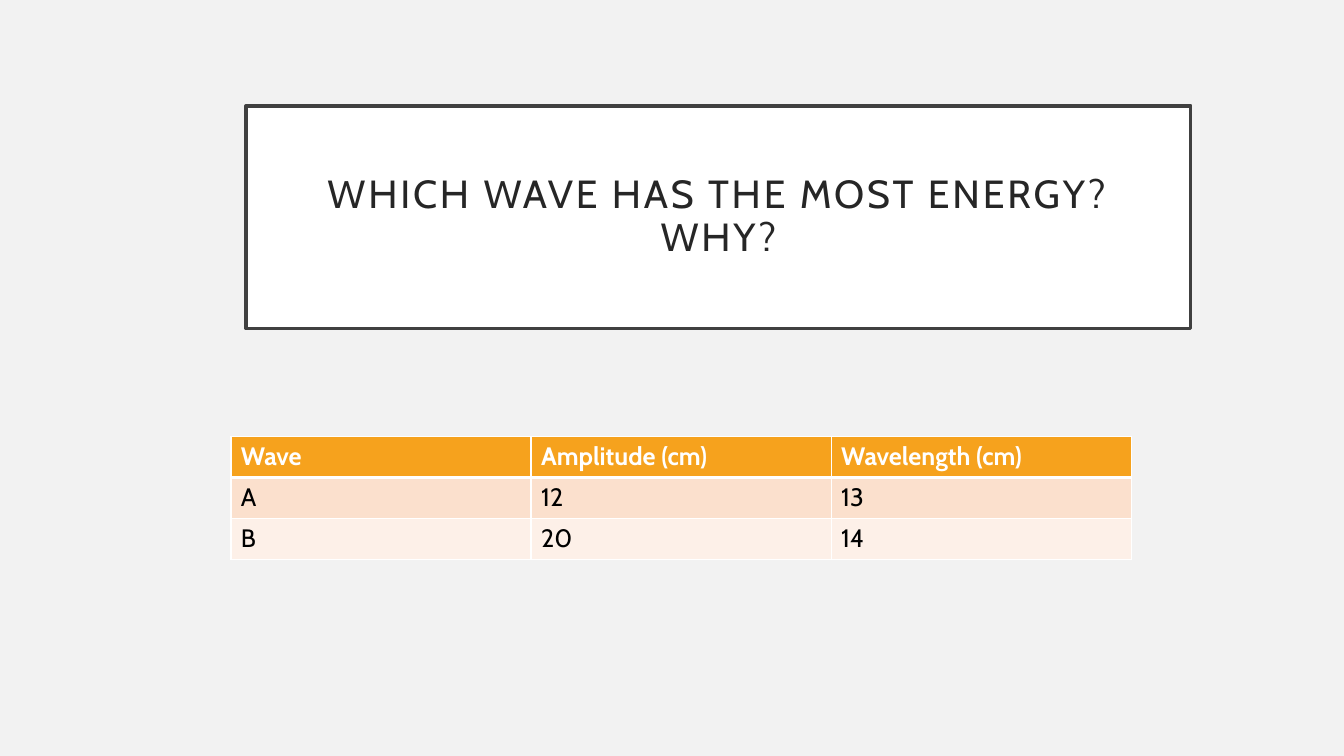
from dataclasses import dataclass

from lxml.etree import SubElement
from pptx import Presentation
from pptx.dml.color import RGBColor
from pptx.enum.text import MSO_ANCHOR, PP_ALIGN
from pptx.oxml.ns import qn
from pptx.util import Inches, Pt


@dataclass(frozen=True)
class Theme:
    font: str = "Cabin"
    background: str = "F2F2F2"
    white: str = "FFFFFF"
    black: str = "000000"
    title_text: str = "262626"
    title_line: str = "404040"
    header_fill: str = "F6A21D"
    band_fills: tuple = ("FBE0CD", "FDF0E8")
    title_size: int = 28
    table_size: int = 18


theme = Theme()


def style_run(run, size, color, bold=False):
    run.font.name = theme.font
    run.font.size = Pt(size)
    run.font.bold = bold
    run.font.color.rgb = RGBColor.from_string(color)


def add_border(cell, side, width):
    line = SubElement(cell._tc.get_or_add_tcPr(), qn(f"a:{side}"), w=str(Pt(width)))
    fill = SubElement(line, qn("a:solidFill"))
    SubElement(fill, qn("a:srgbClr"), val=theme.white)


# Slide and background
presentation = Presentation()
presentation.slide_width = Inches(13.33)
presentation.slide_height = Inches(7.5)
slide = presentation.slides.add_slide(presentation.slide_layouts[5])
slide.background.fill.solid()
slide.background.fill.fore_color.rgb = RGBColor.from_string(theme.background)

# Framed title
title = slide.shapes.title
title.left, title.top = Inches(2.44), Inches(1.05)
title.width, title.height = Inches(9.37), Inches(2.21)
title.fill.solid()
title.fill.fore_color.rgb = RGBColor.from_string(theme.white)
title.line.color.rgb = RGBColor.from_string(theme.title_line)
title.line.width = Pt(2.5)
title_frame = title.text_frame
title_frame.text = "WHICH WAVE HAS THE MOST ENERGY? WHY?"
title_frame.word_wrap = True
title_frame.vertical_anchor = MSO_ANCHOR.MIDDLE
title_frame.margin_left = title_frame.margin_right = Inches(0.2)
title_frame.margin_top = title_frame.margin_bottom = Inches(0.2)
title_paragraph = title_frame.paragraphs[0]
title_paragraph.alignment = PP_ALIGN.CENTER
title_paragraph.line_spacing = 0.9
title_run = title_paragraph.runs[0]
style_run(title_run, theme.title_size, theme.title_text)
title_run._r.get_or_add_rPr().set("spc", "200")

# Wave table
waves = [
    ("Wave", "Amplitude (cm)", "Wavelength (cm)"),
    ("A", "12", "13"),
    ("B", "20", "14"),
]
table = slide.shapes.add_table(
    len(waves), len(waves[0]), Inches(2.29), Inches(4.33), Inches(8.93), Inches(1.22)
).table

for row_index, values in enumerate(waves):
    is_header = row_index == 0
    fill_color = theme.header_fill if is_header else theme.band_fills[row_index - 1]
    text_color = theme.white if is_header else theme.black
    for column_index, value in enumerate(values):
        cell = table.cell(row_index, column_index)
        cell.text = value
        style_run(cell.text_frame.paragraphs[0].runs[0], theme.table_size, text_color, is_header)
        # Borders come before the fill in the cell properties
        add_border(cell, "lnL", 1)
        add_border(cell, "lnR", 1)
        add_border(cell, "lnT", 3 if row_index == 1 else 1)
        add_border(cell, "lnB", 3 if is_header else 1)
        cell.fill.solid()
        cell.fill.fore_color.rgb = RGBColor.from_string(fill_color)

presentation.save("out.pptx")
